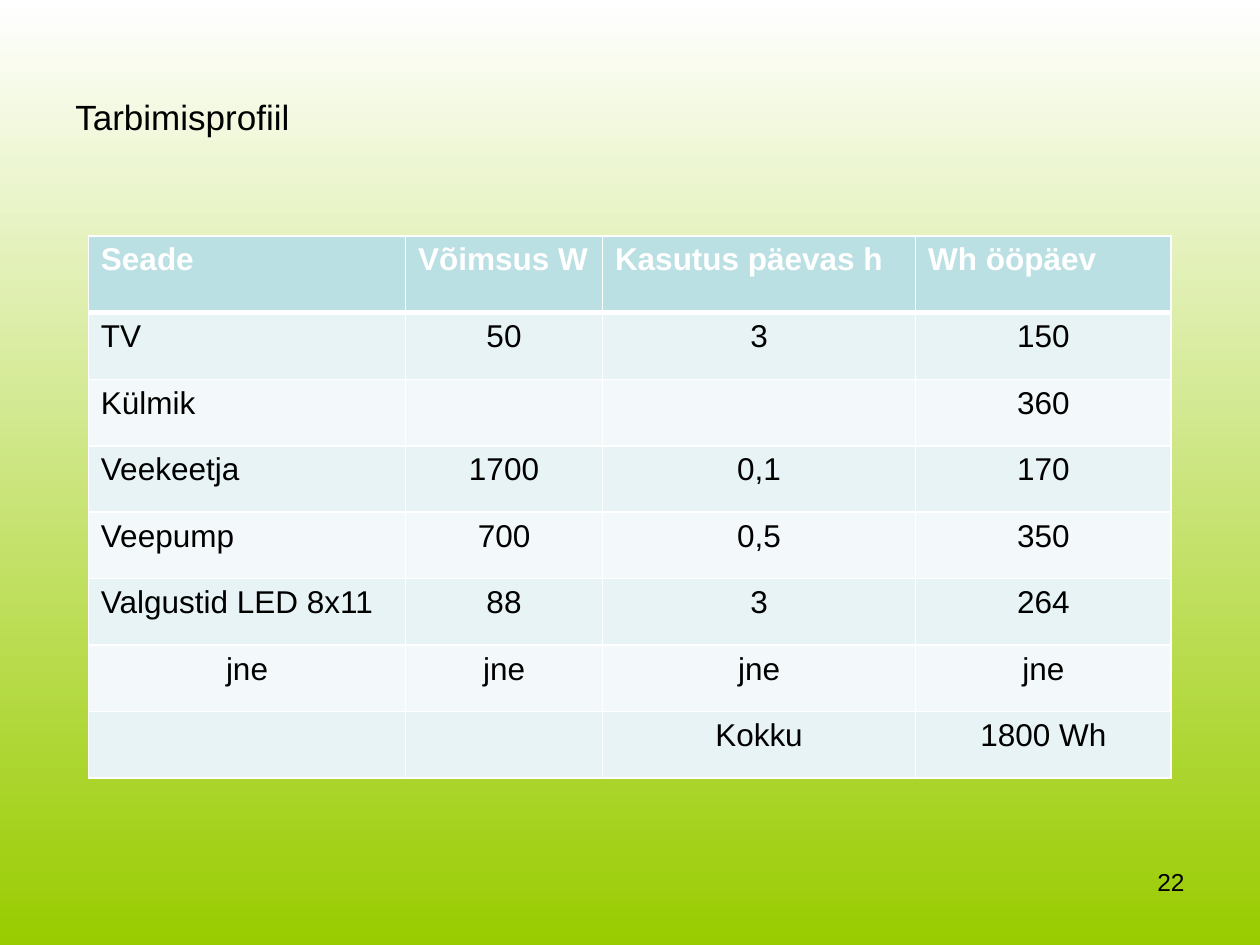
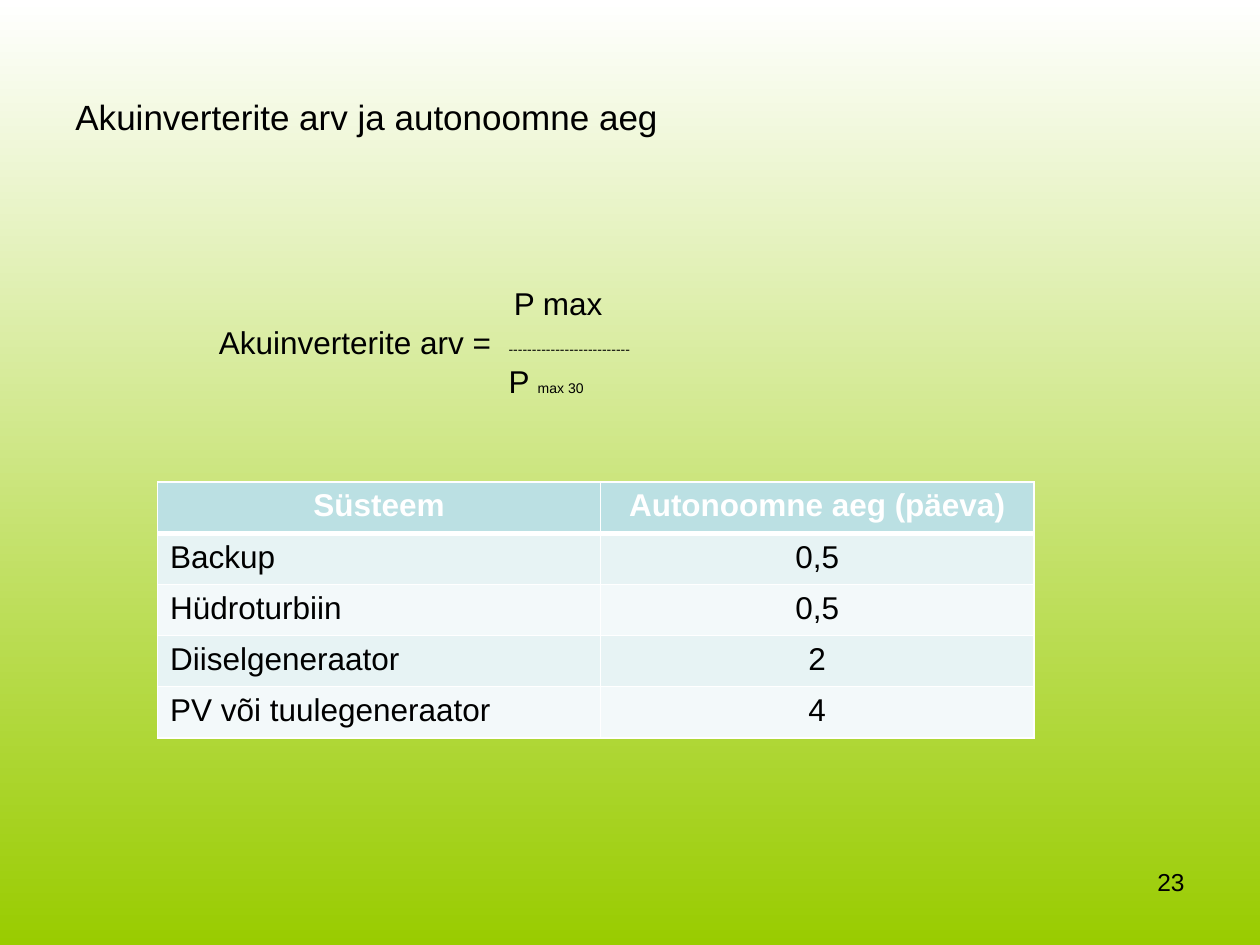
from lxml.etree import SubElement
from pptx import Presentation
from pptx.dml.color import RGBColor
from pptx.enum.text import MSO_ANCHOR, PP_ALIGN
from pptx.oxml.ns import qn
from pptx.util import Pt

FONT = "Arial"
BLACK, WHITE, GREEN = "000000", "FFFFFF", "99CC00"
HEADER, BANDS = "BBE0E3", ("E7F3F4", "F3F9FA")
LEFT, CENTER, RIGHT = PP_ALIGN.LEFT, PP_ALIGN.CENTER, PP_ALIGN.RIGHT


def rgb(color):
    return RGBColor.from_string(color)


class Deck:
    def __init__(self):
        self.prs = Presentation()
        self.prs.slide_width, self.prs.slide_height = Pt(720), Pt(540)
        self.s = None
        # Background shared by all slides
        fill = self.prs.slide_master.background.fill
        fill.gradient()
        fill.gradient_angle = 270
        for stop, color in zip(fill.gradient_stops, (WHITE, GREEN)):
            stop.color.rgb = rgb(color)

    def slide(self, title, number):
        self.s = self.prs.slides.add_slide(self.prs.slide_layouts[6])
        tf = self.text_frame(36, 21.5, 648, 90)
        tf.vertical_anchor = MSO_ANCHOR.MIDDLE
        self.run(tf.paragraphs[0], title, size=20)
        p = self.text_frame(516.25, 491.75, 167.75, 37.5).paragraphs[0]
        p.alignment = RIGHT
        self.run(p, str(number), size=14)

    def text_frame(self, *box):
        tf = self.s.shapes.add_textbox(*map(Pt, box)).text_frame
        tf.word_wrap = True
        return tf

    def style(self, font, size=18, color=BLACK, bold=False):
        for name, value in {"name": FONT, "size": Pt(size), "bold": bold}.items():
            setattr(font, name, value)
        font.color.rgb = rgb(color)

    def run(self, p, text, **fmt):
        r = p.add_run()
        r.text = text
        self.style(r.font, **fmt)

    def tabbed_lines(self, box, lines):
        """Each line is a tab position and a list of (text, size) runs."""
        tf = self.text_frame(*box)
        for i, (tab, runs) in enumerate(lines):
            p = tf.add_paragraph() if i else tf.paragraphs[0]
            p.line_spacing = 1.04
            tabs = SubElement(p._p.get_or_add_pPr(), qn("a:tabLst"))
            SubElement(tabs, qn("a:tab"), pos=str(Pt(tab)), algn="l")
            for text, size in runs:
                self.run(p, text, size=size)

    def borders(self, cell, top, bottom):
        tcPr = cell._tc.get_or_add_tcPr()
        for side, width in {"L": 1, "R": 1, "T": top, "B": bottom}.items():
            ln = SubElement(tcPr, qn(f"a:ln{side}"), w=str(Pt(width)))
            SubElement(SubElement(ln, qn("a:solidFill")), qn("a:srgbClr"), val=WHITE)

    def table(self, left, top, widths, heights, rows, align):
        """align gives the alignment of the cell at (row, column)."""
        box = map(Pt, (left, top, sum(widths), sum(heights)))
        tbl = self.s.shapes.add_table(len(rows), len(widths), *box).table
        for col, width in zip(tbl.columns, widths):
            col.width = Pt(width)
        for i, (row, height) in enumerate(zip(rows, heights)):
            tbl.rows[i].height = Pt(height)
            for j, text in enumerate(row):
                cell = tbl.cell(i, j)
                self.borders(cell, 3 if i == 1 else 1, 1 if i else 3)
                cell.fill.solid()
                cell.fill.fore_color.rgb = rgb(BANDS[(i - 1) % 2] if i else HEADER)
                p = cell.text_frame.paragraphs[0]
                p.alignment = align(i, j)
                if text:
                    self.run(p, text, color=BLACK if i else WHITE, bold=not i)
                else:
                    self.style(p.font)


def main():
    deck = Deck()

    # Consumption profile
    deck.slide("Tarbimisprofiil", 22)
    devices = [
        ("Seade", "Võimsus W", "Kasutus päevas h", "Wh ööpäev"),
        ("TV", "50", "3", "150"),
        ("Külmik", "", "", "360"),
        ("Veekeetja", "1700", "0,1", "170"),
        ("Veepump", "700", "0,5", "350"),
        ("Valgustid LED 8x11", "88", "3", "264"),
        ("jne", "jne", "jne", "jne"),
        ("", "", "Kokku", "1800 Wh"),
    ]
    deck.table(50.5, 134.75, (181.25, 112.5, 179, 146), [44] + [38] * 7, devices,
               lambda i, j: CENTER if i and (j or devices[i][j] == "jne") else LEFT)

    # Number of inverters and autonomous time
    deck.slide("Akuinverterite arv ja autonoomne aeg", 23)
    systems = [
        ("Süsteem", "Autonoomne aeg (päeva)"),
        ("Backup", "0,5"),
        ("Hüdroturbiin", "0,5"),
        ("Diiselgeneraator", "2"),
        ("PV või tuulegeneraator", "4"),
    ]
    deck.table(90, 275.5, (253.25, 247.5), [29.25] * 5, systems,
               lambda i, j: LEFT if i and not j else CENTER)
    deck.tabbed_lines((118, 157.75, 305.25, 72.75), [
        (168.5, [("\tP max", 18)]),
        (165.5, [("Akuinverterite arv =\t", 18), ("-" * 26, 8)]),
        (165.5, [("\tP ", 18), ("max 30", 8)]),
    ])

    deck.prs.save("out.pptx")


if __name__ == "__main__":
    main()
